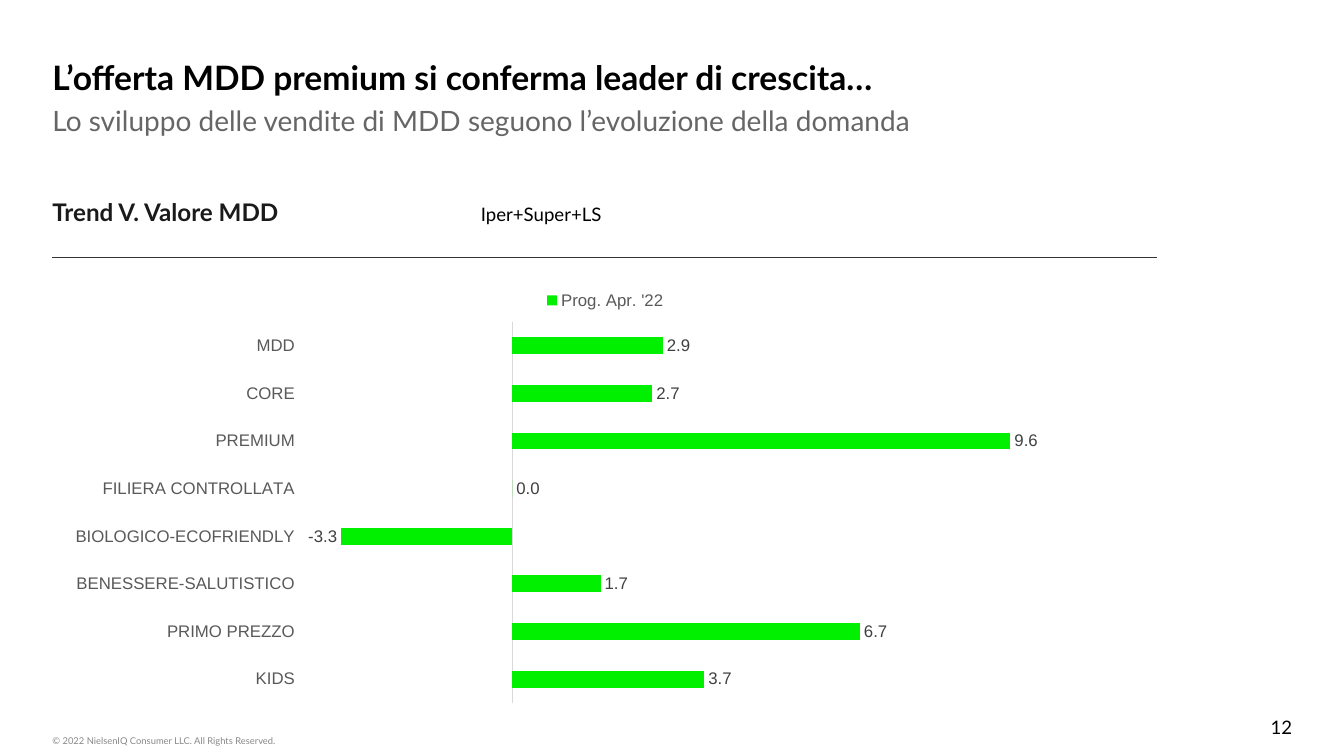
import pptx
import pptx.chart.data
import pptx.dml.color
import pptx.enum.chart
import pptx.enum.shapes
import pptx.enum.text
import pptx.oxml.ns
import pptx.util
from lxml import etree

Pt = pptx.util.Pt
COLORS = {
    "black": "000000", "heading": "1A1A1A", "rule": "333333", "value": "404040",
    "label": "595959", "subtitle": "666666", "copyright": "888888",
    "axis": "D9D9D9", "bar": "00F000",
}
LEFT = 37.44
LEFT_ALIGN = pptx.enum.text.PP_ALIGN.LEFT
RIGHT_ALIGN = pptx.enum.text.PP_ALIGN.RIGHT


def color(name):
    return pptx.dml.color.RGBColor.from_string(COLORS[name])


def style_font(font, name, size, color_name, bold=False):
    font.name = name
    font.size = Pt(size)
    font.bold = bold
    font.color.rgb = color(color_name)


presentation = pptx.Presentation()
presentation.slide_width = Pt(960)
presentation.slide_height = Pt(540)
slide = presentation.slides.add_slide(presentation.slide_layouts[6])

texts = [
    ("© 2022 NielsenIQ Consumer LLC. All Rights Reserved.",
     LEFT, 521.28, 531.36, 19.44, 5.04, 6.7, "copyright", False, LEFT_ALIGN),
    ("12", 707.04, 504.72, 216, 28.8, 5.04, 13.3, "black", False, RIGHT_ALIGN),
    ("L’offerta MDD premium si conferma leader di crescita…",
     LEFT, 30.96, 885.6, 41.04, 9.36, 24, "black", True, LEFT_ALIGN),
    ("Lo sviluppo delle vendite di MDD seguono l’evoluzione della domanda",
     LEFT, 64.8, 885.6, 40.32, 9.36, 20, "subtitle", False, LEFT_ALIGN),
    ("Trend V. Valore MDD\t",
     LEFT, 137.52, 411.12, 31.68, 3.6, 17.3, "heading", True, LEFT_ALIGN),
]
for text, left, top, width, height, inset, size, color_name, bold, alignment in texts:
    text_box = slide.shapes.add_textbox(Pt(left), Pt(top), Pt(width), Pt(height))
    text_frame = text_box.text_frame
    text_frame.word_wrap = True
    text_frame.margin_left = text_frame.margin_right = Pt(0)
    text_frame.margin_top = text_frame.margin_bottom = Pt(inset)
    text_frame.text = text
    paragraph = text_frame.paragraphs[0]
    paragraph.alignment = alignment
    style_font(paragraph.runs[0].font, "Lato", size, color_name, bold)
    if text == "12":
        text_frame.vertical_anchor = pptx.enum.text.MSO_ANCHOR.MIDDLE

paragraph.space_after = Pt(16)
tab_list = etree.SubElement(paragraph._p.get_or_add_pPr(), pptx.oxml.ns.qn("a:tabLst"))
etree.SubElement(tab_list, pptx.oxml.ns.qn("a:tab"), pos=str(Pt(306)), algn="l")
channel_run = paragraph.add_run()
channel_run.text = "Iper+Super+LS"
style_font(channel_run.font, "Lato", 13.3, "black")

rule = slide.shapes.add_connector(
    pptx.enum.shapes.MSO_CONNECTOR.STRAIGHT, Pt(LEFT), Pt(183.6), Pt(826.56), Pt(183.6))
rule.line.color.rgb = color("rule")
rule.line.width = Pt(0.75)
etree.SubElement(rule._element.spPr, pptx.oxml.ns.qn("a:effectLst"))

chart_data = pptx.chart.data.CategoryChartData(number_format="0.0")
chart_data.categories = [
    "MDD", "CORE", "PREMIUM", "FILIERA CONTROLLATA", "BIOLOGICO-ECOFRIENDLY",
    "BENESSERE-SALUTISTICO", "PRIMO PREZZO", "KIDS",
]
chart_data.add_series("Prog. Apr. '22", [2.9, 2.7, 9.6, 0, -3.3, 1.7, 6.7, 3.7])
chart = slide.shapes.add_chart(
    pptx.enum.chart.XL_CHART_TYPE.BAR_CLUSTERED,
    Pt(38.16), Pt(200.16), Pt(788.4), Pt(308.16), chart_data).chart
style_font(chart.font, "Arial", 10, "black")
chart.has_title = False
chart.has_legend = True
chart.legend.position = pptx.enum.chart.XL_LEGEND_POSITION.TOP
chart.legend.include_in_layout = False
style_font(chart.legend.font, "Arial", 12, "label")

category_axis = chart.category_axis
category_axis.reverse_order = True
category_axis.tick_label_position = pptx.enum.chart.XL_TICK_LABEL_POSITION.LOW
category_axis.major_tick_mark = pptx.enum.chart.XL_TICK_MARK.NONE
category_axis.format.line.color.rgb = color("axis")
category_axis.format.line.width = Pt(0.75)
style_font(category_axis.tick_labels.font, "Arial", 12, "label")

value_axis = chart.value_axis
value_axis.visible = False
value_axis.has_major_gridlines = False
value_axis.minimum_scale = -4
value_axis.maximum_scale = 12

plot = chart.plots[0]
plot.gap_width = 182
plot.vary_by_categories = False
series = plot.series[0]
series.invert_if_negative = False
series.format.fill.solid()
series.format.fill.fore_color.rgb = color("bar")
data_labels = series.data_labels
data_labels.show_value = True
data_labels.number_format = "0.0"
data_labels.number_format_is_linked = False
data_labels.position = pptx.enum.chart.XL_LABEL_POSITION.OUTSIDE_END
style_font(data_labels.font, "Arial", 12, "value")

presentation.save("out.pptx")
